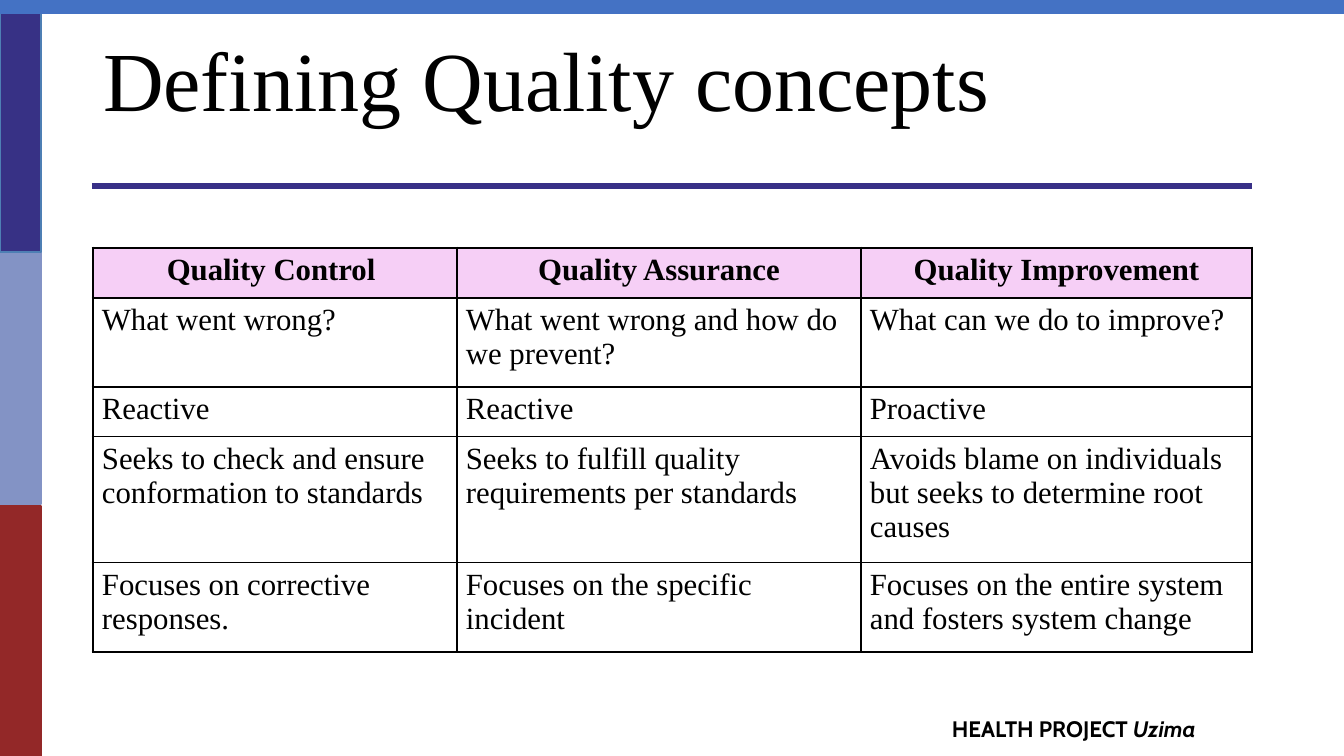
from lxml import etree
from pptx import Presentation
from pptx.dml.color import RGBColor
from pptx.enum.shapes import MSO_CONNECTOR, MSO_SHAPE
from pptx.enum.text import MSO_ANCHOR, PP_ALIGN
from pptx.oxml.ns import qn
from pptx.util import Pt

RECTANGLE = MSO_SHAPE.RECTANGLE
STRAIGHT = MSO_CONNECTOR.STRAIGHT
BOTTOM = MSO_ANCHOR.BOTTOM
TOP = MSO_ANCHOR.TOP
LEFT = PP_ALIGN.LEFT
CENTER = PP_ALIGN.CENTER

COLORS = {
    "black": "000000",
    "periwinkle": "8393C5",
    "red": "932828",
    "indigo": "373185",
    "outline": "4E7FB4",
    "rule": "383087",
    "blue": "4472C4",
    "pink": "F6CFF6",
}
SERIF = "Times New Roman"


def px(*lengths):
    return [round(length * 914400 / 100.8) for length in lengths]


def add_run(para, text, font, size, bold=False, italic=False):
    span = para.add_run()
    span.text = text
    span.font.name = font
    span.font.size = Pt(size)
    span.font.bold = bold
    span.font.italic = italic
    span.font.color.rgb = RGBColor.from_string(COLORS["black"])


deck = Presentation()
deck.slide_width, deck.slide_height = px(1344, 756)
page = deck.slides.add_slide(deck.slide_layouts[5])

bands = [
    (0, 252, 41, 252, "periwinkle", "periwinkle"),
    (0, 506, 41, 250, "red", "red"),
    (0, 0, 41, 252, "indigo", "outline"),
    (0, 0, 1344, 14, "blue", None),
]
for left, top, width, height, fill, line in bands:
    band = page.shapes.add_shape(RECTANGLE, *px(left, top, width, height))
    band.shadow.inherit = False
    band.fill.solid()
    band.fill.fore_color.rgb = RGBColor.from_string(COLORS[fill])
    if line:
        band.line.color.rgb = RGBColor.from_string(COLORS[line])
        band.line.width = Pt(1)
    else:
        band.line.fill.background()

rule = page.shapes.add_connector(STRAIGHT, *px(92, 186, 1252, 186))
rule.line.color.rgb = RGBColor.from_string(COLORS["rule"])
rule.line.width = Pt(4.5)
etree.SubElement(rule._element.spPr, qn("a:effectLst"))

title = page.shapes.title
title.left, title.top, title.width, title.height = px(93, 32, 1159, 103)
title.text_frame.word_wrap = True
title.text_frame.vertical_anchor = BOTTOM
para = title.text_frame.paragraphs[0]
para.alignment = LEFT
para.line_spacing = 0.9
add_run(para, "Defining Quality concepts", SERIF, 60)

footer = page.shapes.add_textbox(*px(942, 710, 386, 36))
footer.text_frame.word_wrap = True
para = footer.text_frame.paragraphs[0]
add_run(para, "HEALTH PROJECT ", "Cabin", 16, bold=True)
add_run(para, "Uzima", "Cabin", 16, bold=True, italic=True)

column_widths = px(364, 404, 391)
row_heights = px(50, 89, 50, 126, 89)
rows = [
    ["Quality Control ", "Quality Assurance", "Quality Improvement"],
    ["What went wrong?", "What went wrong and how do we prevent?", "What can we do to improve?"],
    ["Reactive", "Reactive", "Proactive"],
    [
        "Seeks to check and ensure conformation to standards",
        "Seeks to fulfill quality requirements per standards",
        "Avoids blame on individuals but seeks to determine root causes",
    ],
    [
        "Focuses on corrective responses.",
        "Focuses on the specific incident",
        "Focuses on the entire system and fosters system change",
    ],
]
last_row = len(rows) - 1
table = page.shapes.add_table(len(rows), len(column_widths), *px(93, 248, 1159, 404)).table
table.first_row = False
table.horz_banding = False
for column, width in zip(table.columns, column_widths):
    column.width = width
for row, height in zip(table.rows, row_heights):
    row.height = height

for r, texts in enumerate(rows):
    header = r == 0
    for c, text in enumerate(texts):
        cell = table.cell(r, c)
        cell.margin_left, cell.margin_right, cell.margin_top, cell.margin_bottom = px(9, 9, 5, 5)
        cell.vertical_anchor = TOP
        para = cell.text_frame.paragraphs[0]
        para.alignment = CENTER if header else LEFT
        add_run(para, text, SERIF, 22, bold=header)

        thick_edges = {"a:lnL": c == 0, "a:lnR": False, "a:lnT": header, "a:lnB": r == last_row}
        properties = cell._tc.get_or_add_tcPr()
        for edge, thick in thick_edges.items():
            border = etree.SubElement(properties, qn(edge), w=str(Pt(2.25 if thick else 1)))
            paint = etree.SubElement(border, qn("a:solidFill"))
            etree.SubElement(paint, qn("a:srgbClr"), val=COLORS["black"])

        if header:
            cell.fill.solid()
            cell.fill.fore_color.rgb = RGBColor.from_string(COLORS["pink"])
        else:
            cell.fill.background()

deck.save("out.pptx")
